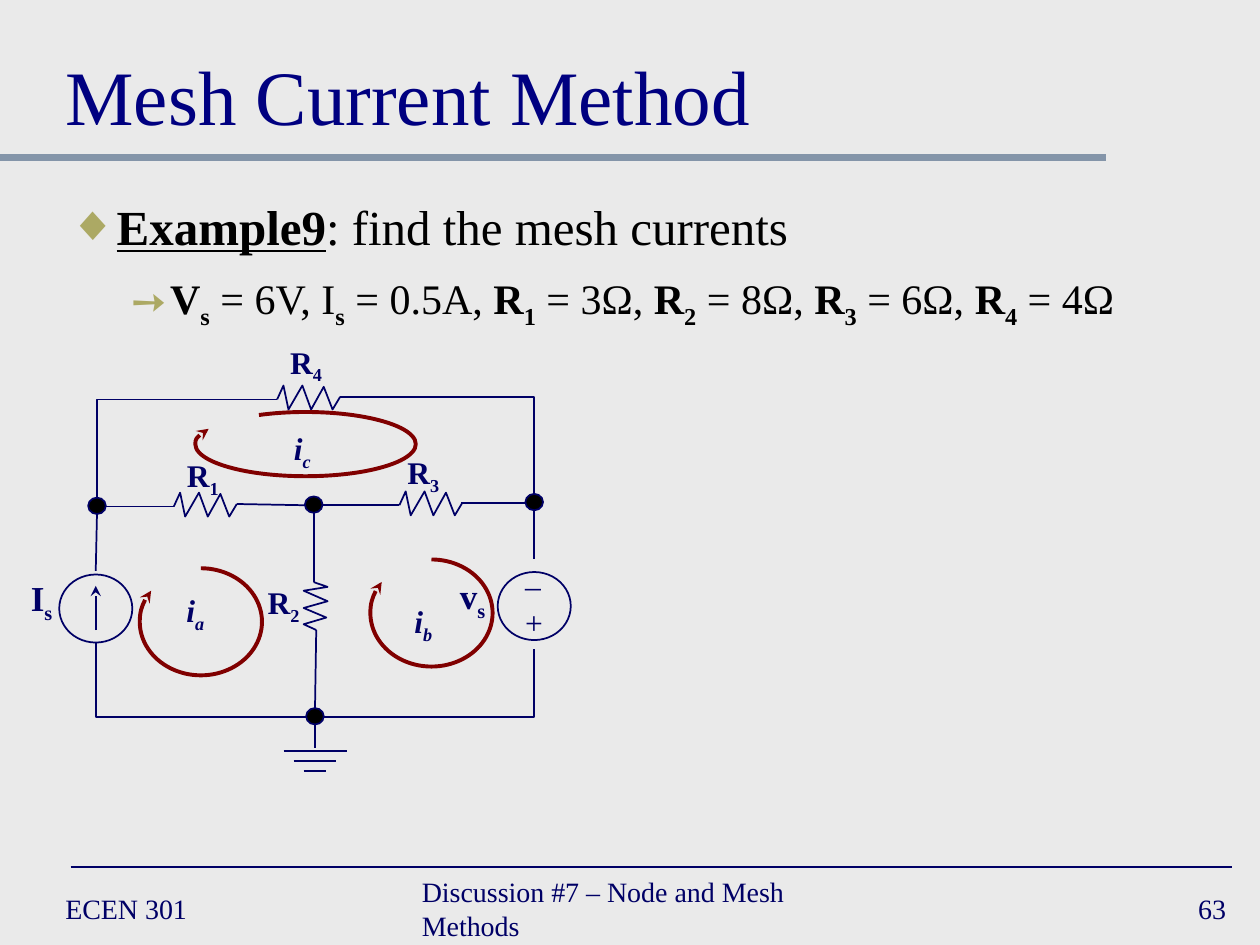
import pptx
import pptx.util
import pptx.dml.color
import pptx.enum.shapes
import pptx.enum.text
import pptx.oxml
from pptx.util import Inches

NAVY, MAROON, OLIVE = "000066", "800000", "ACA964"
FONT = "Times New Roman"
NS = 'xmlns:a="http://schemas.openxmlformats.org/drawingml/2006/main"'
SHAPE = pptx.enum.shapes.MSO_SHAPE
ALIGN = pptx.enum.text.PP_ALIGN
ANCHOR = pptx.enum.text.MSO_ANCHOR

# Resistor outline, as offsets from its first end
ZIGZAG = [(0, 0), (0.05, -0.11), (0.09, 0.08), (0.2, -0.11),
          (0.27, 0.08), (0.37, -0.1), (0.44, 0.08), (0.5, -0.02)]


def rgb(value):
    return pptx.dml.color.RGBColor.from_string(value)


def xml(text):
    return pptx.oxml.parse_xml(text)


def add_run(p, text, size=18, color=NAVY, bold=False, italic=False,
            underline=False, sub=False):
    r = p.add_run()
    r.text = text
    f = r.font
    f.name, f.size, f.color.rgb = FONT, pptx.util.Pt(size), rgb(color)
    f.bold, f.italic, f.underline = bold, italic, underline
    if sub:
        r._r.get_or_add_rPr().set("baseline", "-25000")


def add_textbox(s, x, y, w, h, align=ALIGN.LEFT, anchor=ANCHOR.TOP):
    tf = s.shapes.add_textbox(Inches(x), Inches(y), Inches(w), Inches(h)).text_frame
    tf.word_wrap = False
    tf.vertical_anchor = anchor
    tf.paragraphs[0].alignment = align
    return tf


def add_label(s, x, y, name, sub, size=18, italic=False):
    """Bold symbol with a subscript, centred on x."""
    p = add_textbox(s, x - 0.25, y, 0.5, 0.4, ALIGN.CENTER).paragraphs[0]
    add_run(p, name, size, bold=True, italic=italic)
    add_run(p, sub, size, bold=True, italic=italic, sub=True)


def set_line(sp, color, width, arrow=False):
    sp.line.color.rgb = rgb(color)
    sp.line.width = pptx.util.Pt(width)
    if arrow:
        sp.line._get_or_add_ln().append(xml(f'<a:tailEnd {NS} type="stealth"/>'))


def add_line(s, x1, y1, x2, y2, color=NAVY, width=1, arrow=False):
    kind = pptx.enum.shapes.MSO_CONNECTOR.STRAIGHT
    sp = s.shapes.add_connector(kind, Inches(x1), Inches(y1), Inches(x2), Inches(y2))
    set_line(sp, color, width, arrow)
    sp._element.spPr.append(xml(f"<a:effectLst {NS}/>"))


def add_polyline(s, points):
    pts = [(Inches(x), Inches(y)) for x, y in points]
    builder = s.shapes.build_freeform(*pts[0])
    builder.add_line_segments(pts[1:], close=False)
    sp = builder.convert_to_shape()
    sp.shadow.inherit = False
    sp.fill.background()
    set_line(sp, NAVY, 1)


def add_resistor(s, x, y, vertical=False):
    if vertical:
        add_polyline(s, [(x - dy, y + 0.76 * dx) for dx, dy in ZIGZAG])
    else:
        add_polyline(s, [(x + dx, y + dy) for dx, dy in ZIGZAG])


def add_preset(s, kind, x, y, w, h, fill=None):
    sp = s.shapes.add_shape(kind, Inches(x), Inches(y), Inches(w), Inches(h))
    sp.shadow.inherit = False
    if fill:
        sp.fill.solid()
        sp.fill.fore_color.rgb = rgb(fill)
    else:
        sp.fill.background()
    set_line(sp, NAVY, 1)
    return sp


def add_loop(s, x, y, w, h, start, end):
    """Clockwise mesh arrow between two angles in degrees."""
    sp = add_preset(s, SHAPE.ARC, x, y, w, h)
    sp.adjustments[0], sp.adjustments[1] = start * 0.6, end * 0.6
    set_line(sp, MAROON, 2.25, arrow=True)


def set_bullet(p, char, left, hang):
    pPr = p._p.get_or_add_pPr()
    pPr.set("marL", str(Inches(left)))
    pPr.set("indent", str(-Inches(hang)))
    pPr.append(xml(f'<a:buClr {NS}><a:srgbClr val="{OLIVE}"/></a:buClr>'))
    pPr.append(xml(f'<a:buChar {NS} char="{char}"/>'))


def place(sp, x, y, w, h):
    sp.left, sp.top, sp.width, sp.height = Inches(x), Inches(y), Inches(w), Inches(h)
    tf = sp.text_frame
    tf.auto_size = pptx.enum.text.MSO_AUTO_SIZE.NONE
    tf.word_wrap = True
    return tf


def add_heading_and_list(s):
    tf = place(s.shapes.title, 0.42, 0.17, 9.17, 1)
    tf.vertical_anchor = ANCHOR.BOTTOM
    tf.paragraphs[0].alignment = ALIGN.LEFT
    add_run(tf.paragraphs[0], "Mesh Current Method", 44, "000080")

    tf = place(s.placeholders[1], 0.44, 1.46, 9.14, 1.54)
    tf.vertical_anchor = ANCHOR.TOP
    tf.margin_top = Inches(0.1)
    p = tf.paragraphs[0]
    p.space_before = pptx.util.Pt(0)
    set_bullet(p, "◆", 0.38, 0.38)
    add_run(p, "Example9", 28, "000000", bold=True, underline=True)
    add_run(p, ": find the mesh currents", 28, "000000")

    p = tf.add_paragraph()
    p.level = 1
    p.space_before = pptx.util.Pt(10)
    set_bullet(p, "➙", 0.81, 0.31)
    givens = [("V", "s", " = 6V, "), ("I", "s", " = 0.5A, "), ("R", "1", " = 3Ω, "),
              ("R", "2", " = 8Ω, "), ("R", "3", " = 6Ω, "), ("R", "4", " = 4Ω")]
    for name, sub, value in givens:
        add_run(p, name, 24, "000000", bold=name != "I")
        add_run(p, sub, 24, "000000", bold=True, sub=True)
        add_run(p, value, 24, "000000")


def add_frame(s):
    # Rules and footer
    add_line(s, 0, 1.25, 8.78, 1.25, "8495A9", 4)
    add_line(s, 0.56, 6.88, 9.78, 6.88)
    for x, w, text, align in [
            (0.42, 2.17, "ECEN 301", ALIGN.LEFT),
            (3.25, 3.83, "Discussion #7 – Node and Mesh Methods", ALIGN.LEFT),
            (7.75, 2.08, "63", ALIGN.RIGHT)]:
        tf = add_textbox(s, x, 7, w, 0.42, align, ANCHOR.MIDDLE)
        add_run(tf.paragraphs[0], text, 16)


def add_circuit(s):
    # Wires
    for wire in [(0.84, 4.02, 1.38, 4.02), (1.88, 4, 2.42, 4.01),
                 (2.56, 4.01, 3.17, 4.01), (3.66, 3.99, 4.17, 3.99),
                 (0.77, 4.08, 0.76, 4.53), (4.24, 4.05, 4.24, 4.44),
                 (2.49, 4.07, 2.49, 4.62), (2.51, 5, 2.5, 5.62)]:
        add_line(s, *wire)
    for corner in [[(0.77, 3.95), (0.77, 3.17), (2.2, 3.17)],
                   [(2.7, 3.15), (4.24, 3.15), (4.24, 3.92)],
                   [(0.76, 5.1), (0.76, 5.69), (2.43, 5.69)],
                   [(2.57, 5.69), (4.24, 5.69), (4.24, 5.15)]]:
        add_polyline(s, corner)

    # Resistors
    for x, y in [(1.38, 4.02), (3.17, 4.01), (2.2, 3.17)]:
        add_resistor(s, x, y)
    add_resistor(s, 2.49, 4.62, vertical=True)

    # Ground
    add_line(s, 2.5, 5.69, 2.5, 5.94)
    for i, half in enumerate([0.25, 0.17, 0.09]):
        y = 5.96 + 0.08 * i
        add_line(s, 2.5 - half, y, 2.5 + half, y)

    # Nodes
    for x, y in [(0.7, 3.95), (2.42, 3.94), (4.17, 3.92), (2.43, 5.62)]:
        add_preset(s, SHAPE.OVAL, x, y, 0.14, 0.13, fill="000000")

    # Current and voltage sources
    add_preset(s, SHAPE.OVAL, 0.47, 4.56, 0.58, 0.54)
    add_line(s, 0.76, 5, 0.76, 4.65, arrow=True)
    add_preset(s, SHAPE.OVAL, 3.95, 4.54, 0.58, 0.54)
    tf = add_textbox(s, 4.07, 4.44, 0.34, 0.7)
    add_run(tf.paragraphs[0], "–")
    add_run(tf.add_paragraph(), "+")

    # Mesh currents
    add_loop(s, 1.11, 4.51, 0.97, 0.85, 270, 212)
    add_loop(s, 2.94, 4.44, 0.97, 0.85, 270, 212)
    add_loop(s, 1.55, 3.27, 1.75, 0.51, 212, 189)

    # Labels
    for x, y, sub in [(1.61, 3.57, "1"), (2.25, 4.58, "2"),
                      (3.36, 3.55, "3"), (2.43, 2.67, "4")]:
        add_label(s, x, y, "R", sub)
    add_label(s, 0.33, 4.53, "I", "s", size=20)
    add_label(s, 3.75, 4.51, "v", "s", size=20)
    for x, y, sub in [(1.55, 4.64, "a"), (3.36, 4.73, "b"), (2.4, 3.36, "c")]:
        add_label(s, x, y, "i", sub, italic=True)


def main():
    prs = pptx.Presentation()
    prs.slide_width, prs.slide_height = Inches(10), Inches(7.5)
    s = prs.slides.add_slide(prs.slide_layouts[1])
    s.background.fill.solid()
    s.background.fill.fore_color.rgb = rgb("EAEAEA")
    add_frame(s)
    add_heading_and_list(s)
    add_circuit(s)
    prs.save("out.pptx")


if __name__ == "__main__":
    main()
